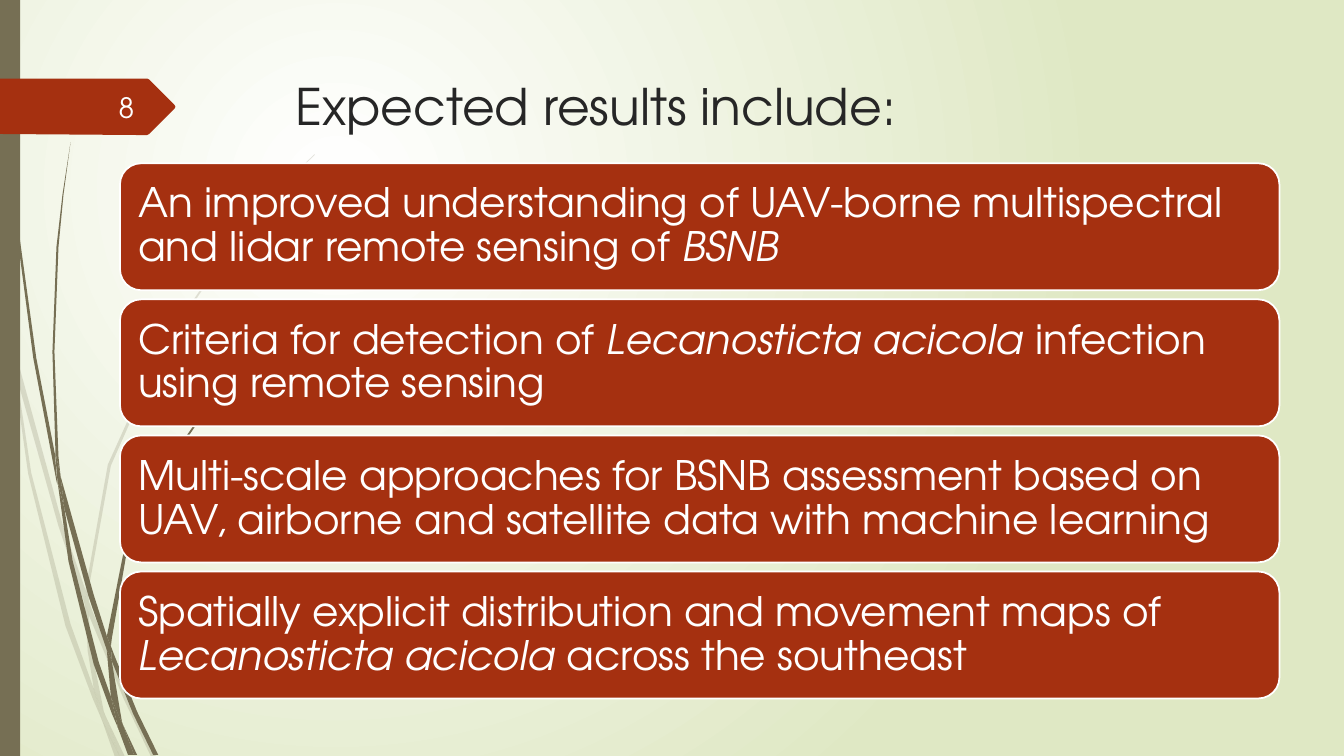
from dataclasses import dataclass

from lxml.etree import SubElement
from pptx import Presentation
from pptx.dml.color import RGBColor
from pptx.enum.shapes import MSO_SHAPE as Shape
from pptx.enum.text import MSO_ANCHOR as Anchor, MSO_AUTO_SIZE as AutoSize, PP_ALIGN as Align
from pptx.oxml.ns import qn
from pptx.util import Pt

PX = 9144  # 100 px to the inch
FONT = "TeX Gyre Adventor"
WHITE = RGBColor(0xFF, 0xFF, 0xFF)
OFF_WHITE = RGBColor(0xFE, 0xFF, 0xFF)
PALE_GREEN = RGBColor(0xDF, 0xE8, 0xC4)
OLIVE = RGBColor(0x76, 0x6F, 0x54)
RUST = RGBColor(0xA5, 0x30, 0x10)
INK = RGBColor(0x26, 0x26, 0x26)

Outline = list[tuple[int, int]]


@dataclass
class Run:
    text: str
    italic: bool = False


@dataclass
class Grass:
    """A tuft of grass: outlines of its pieces, and opacity in percent."""
    pieces: list[Outline]
    opacity: int


PALE_GRASS = Grass([
    [(11, 350), (9, 322), (0, 282), (0, 299), (10, 344)],
    [(58, 522), (84, 599), (85, 586), (62, 520), (14, 345), (17, 376)],
    [(92, 607), (88, 596), (88, 610), (123, 694), (150, 751), (155, 751), (127, 692)],
    [(119, 751), (124, 751), (105, 711)],
    [(93, 683), (70, 619), (31, 469), (17, 376), (11, 350), (28, 470), (65, 621), (92, 693),
     (101, 714), (99, 707)],
    [(84, 599), (87, 646), (93, 683), (96, 692), (105, 711), (103, 706), (91, 646), (88, 610),
     (88, 608)],
    [(88, 584), (110, 462), (160, 349), (229, 245), (268, 198), (290, 175), (312, 154),
     (312, 153), (289, 175), (268, 197), (228, 244), (158, 348), (107, 461), (85, 584),
     (85, 586), (88, 596)],
    [(101, 714), (114, 751), (119, 751)],
    [(88, 608), (88, 610), (88, 596), (85, 586), (84, 599)],
    [(96, 692), (93, 683), (99, 707), (101, 714), (119, 751), (105, 711)],
], 20)

DARK_GRASS = Grass([
    [(7, 110), (17, 233), (33, 355), (56, 477), (57, 481), (55, 457), (55, 453), (36, 355),
     (19, 232), (8, 109), (5, 48), (4, 0), (3, 0), (4, 48)],
    [(88, 592), (106, 645), (106, 633), (106, 631), (93, 590), (60, 472), (64, 505)],
    [(113, 649), (110, 641), (111, 656), (132, 708), (152, 749), (157, 749), (136, 706)],
    [(110, 691), (98, 657), (72, 556), (64, 505), (57, 477), (68, 557), (93, 659), (111, 708),
     (117, 722), (116, 717)],
    [(60, 472), (58, 453), (54, 349), (58, 245), (63, 193), (70, 141), (62, 193), (56, 245),
     (52, 349), (55, 449)],
    [(133, 749), (136, 749), (122, 719)],
    [(57, 477), (64, 505), (60, 472), (55, 449), (55, 453)],
    [(111, 633), (125, 552), (158, 476), (205, 406), (231, 374), (245, 359), (261, 344),
     (260, 344), (245, 358), (231, 373), (204, 405), (156, 474), (122, 551), (106, 631),
     (110, 641)],
    [(117, 722), (127, 749), (131, 749)],
    [(106, 645), (110, 691), (116, 706), (122, 719), (121, 716), (111, 656), (109, 651)],
    [(106, 645), (109, 651), (111, 656), (110, 641), (106, 631), (106, 633)],
    [(116, 706), (110, 691), (116, 717), (117, 722), (130, 749), (133, 749), (122, 719)],
], 100)

PAGE_ARROW = [(0, 78), (146, 78), (148, 79), (173, 104), (174, 106), (173, 108), (148, 133),
              (146, 134), (136, 134), (0, 133)]

RESULTS = [
    [Run("An improved understanding of UAV-borne multispectral and lidar remote sensing of "),
     Run("BSNB", True)],
    [Run("Criteria for detection of "), Run("Lecanosticta acicola ", True),
     Run("infection using remote sensing")],
    [Run("Multi-scale approaches for BSNB assessment based on UAV, airborne and "
         "satellite data with machine learning")],
    [Run("Spatially explicit distribution and movement maps of "),
     Run("Lecanosticta acicola ", True), Run("across the southeast")],
]
CARD_LEFT, CARD_TOP, CARD_WIDTH, CARD_HEIGHT, CARD_PITCH = 119, 162, 1150, 126, 135


def place(sp, left: int, top: int, width: int, height: int) -> None:
    sp.left, sp.top, sp.width, sp.height = (v * PX for v in (left, top, width, height))


def add_runs(p, runs: list[Run], size: int, color: RGBColor) -> None:
    for run in runs:
        r = p.add_run()
        r.text = run.text
        r.font.name, r.font.size, r.font.italic = FONT, Pt(size), run.italic
        r.font.color.rgb = color


def paint(sp, color: RGBColor) -> None:
    sp.shadow.inherit = False
    sp.fill.solid()
    sp.fill.fore_color.rgb = color
    sp.line.fill.background()


def add_preset(s, kind: Shape, box: tuple[int, int, int, int], color: RGBColor):
    sp = s.shapes.add_shape(kind, *(v * PX for v in box))
    paint(sp, color)
    return sp


def add_outline(s, outline: Outline, color: RGBColor):
    builder = s.shapes.build_freeform(*outline[0], scale=PX)
    builder.add_line_segments(outline[1:])
    sp = builder.convert_to_shape()
    paint(sp, color)
    return sp


def add_grass(s, grass: Grass) -> None:
    for piece in grass.pieces:
        sp = add_outline(s, piece, OLIVE)
        if grass.opacity < 100:
            color = sp._element.spPr.find(qn("a:solidFill"))[0]
            SubElement(color, qn("a:alpha"), val=str(grass.opacity * 1000))


def set_background(s) -> None:
    fill = s.background.fill
    fill.gradient()
    for stop, color in zip(fill.gradient_stops, (WHITE, PALE_GREEN)):
        stop.color.rgb = color
    grad = s._element.cSld.find(".//" + qn("a:gradFill"))
    grad.remove(grad.find(qn("a:lin")))
    circle = SubElement(grad, qn("a:path"), path="circle")
    SubElement(circle, qn("a:fillToRect"), l="50000", t="50000", r="100000", b="100000")


def add_title(s, text: str) -> None:
    sp = s.shapes.title
    place(sp, 283, 69, 975, 140)
    tf = sp.text_frame
    tf.auto_size, tf.vertical_anchor = AutoSize.NONE, Anchor.TOP
    p = tf.paragraphs[0]
    p.alignment = Align.LEFT
    add_runs(p, [Run(text)], 36, INK)


def add_page_number(s, number: str) -> None:
    add_outline(s, PAGE_ARROW, RUST)
    tf = s.shapes.add_textbox(58 * PX, 86 * PX, 85 * PX, 40 * PX).text_frame
    tf.word_wrap, tf.vertical_anchor = True, Anchor.MIDDLE
    p = tf.paragraphs[0]
    p.alignment = Align.RIGHT
    add_runs(p, [Run(number)], 20, OFF_WHITE)


def add_card(s, top: int, runs: list[Run]) -> None:
    sp = add_preset(s, Shape.ROUNDED_RECTANGLE, (CARD_LEFT, top, CARD_WIDTH, CARD_HEIGHT), RUST)
    sp.line.color.rgb, sp.line.width = WHITE, Pt(1.25)
    tf = sp.text_frame
    tf.word_wrap, tf.vertical_anchor = True, Anchor.MIDDLE
    tf.margin_left = tf.margin_right = tf.margin_top = tf.margin_bottom = 12 * PX
    p = tf.paragraphs[0]
    p.alignment, p.line_spacing = Align.LEFT, 0.9
    add_runs(p, runs, 29, WHITE)


def main() -> None:
    prs = Presentation()
    prs.slide_width, prs.slide_height = 1333 * PX, 750 * PX
    s = prs.slides.add_slide(prs.slide_layouts[5])

    # Backdrop: gradient, grass and side bar
    set_background(s)
    for grass in (PALE_GRASS, DARK_GRASS):
        add_grass(s, grass)
    add_preset(s, Shape.RECTANGLE, (0, 0, 20, 750), OLIVE)

    # Heading and page marker
    add_title(s, "Expected results include:")
    add_page_number(s, "8")

    # Result cards
    for i, runs in enumerate(RESULTS):
        add_card(s, CARD_TOP + i * CARD_PITCH, runs)

    prs.save("out.pptx")


if __name__ == "__main__":
    main()
